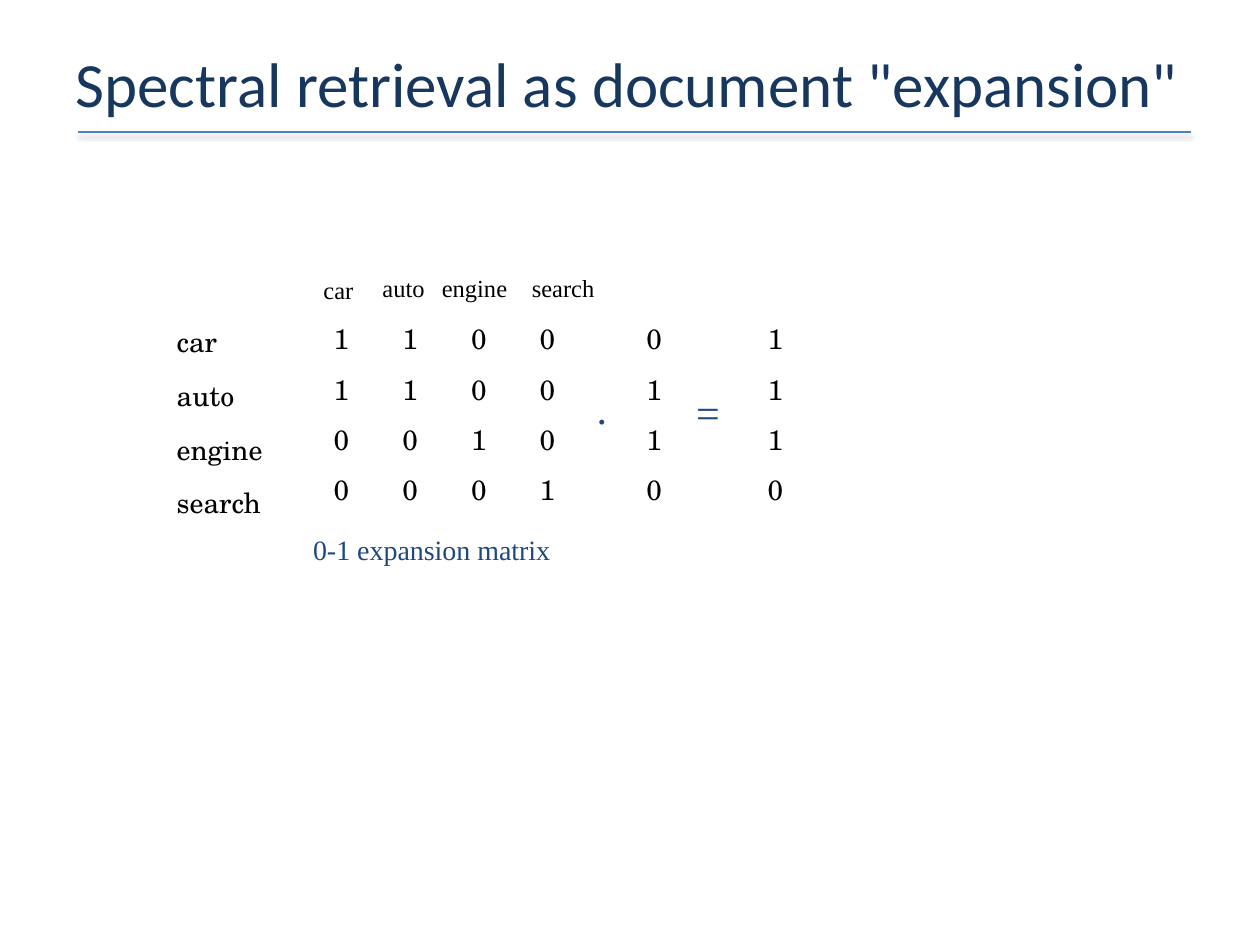
from lxml.etree import SubElement
from pptx import Presentation
from pptx.dml.color import RGBColor
from pptx.enum.shapes import MSO_CONNECTOR
from pptx.enum.text import MSO_ANCHOR, MSO_AUTO_SIZE, PP_ALIGN
from pptx.oxml.ns import qn
from pptx.util import Pt

COLORS = {"title": "17375E", "rule": "4F81BD", "note": "1F497D",
          "text": "000000", "shadow": "000000"}
TERMS = ["car", "auto", "engine", "search"]
EXPANSION = [[1, 1, 0, 0], [1, 1, 0, 0], [0, 0, 1, 0], [0, 0, 0, 1]]
DOCUMENT = [[0], [1], [1], [0]]
EXPANDED = [[1], [1], [1], [0]]
MATRIX_TOP, MATRIX_ROW, MATRIX_COLUMN = 179.2, 28.7, 39.25
TERMS_LEFT, MATRIX_LEFT = 93.8, 175.5


def style_paragraph(paragraph, font, size, color, align=PP_ALIGN.LEFT):
    paragraph.alignment = align
    for run in paragraph.runs:
        run.font.name = font
        run.font.size = Pt(size)
        run.font.color.rgb = RGBColor.from_string(COLORS[color])


def add_title(slide, text):
    title = slide.shapes.title
    title.left, title.top, title.width, title.height = Pt(36), Pt(21.6), Pt(648), Pt(51)
    title.text_frame.text = text
    title.text_frame.vertical_anchor = MSO_ANCHOR.MIDDLE
    style_paragraph(title.text_frame.paragraphs[0], "Calibri", 36, "title")


def add_title_rule(slide):
    """Add the line under the title, with its soft shadow below."""
    rule = slide.shapes.add_connector(
        MSO_CONNECTOR.STRAIGHT, Pt(44.6), Pt(75.6), Pt(680.4), Pt(75.6))
    rule.line.color.rgb = RGBColor.from_string(COLORS["rule"])
    rule.line.width = Pt(1)
    effects = SubElement(rule._element.spPr, qn("a:effectLst"))
    shadow = SubElement(effects, qn("a:outerShdw"), blurRad=str(Pt(3.1)),
                        dist=str(Pt(1.6)), dir="5400000", rotWithShape="0")
    color = SubElement(shadow, qn("a:srgbClr"), val=COLORS["shadow"])
    SubElement(color, qn("a:alpha"), val="38000")


def add_label(slide, text, left, top, width, height, size, color, align=PP_ALIGN.LEFT):
    box = slide.shapes.add_textbox(Pt(left), Pt(top), Pt(width), Pt(height))
    frame = box.text_frame
    frame.word_wrap = False
    frame.auto_size = MSO_AUTO_SIZE.SHAPE_TO_FIT_TEXT
    frame.text = text
    style_paragraph(frame.paragraphs[0], "Times New Roman", size, color, align)


def add_grid(slide, rows, left, top, column_width, row_height):
    """Add a plain table without fills and return its cells."""
    count = len(rows[0])
    table = slide.shapes.add_table(
        len(rows), count, Pt(left), Pt(top),
        Pt(column_width * count), Pt(row_height * len(rows))).table
    table.first_row = table.horz_banding = False
    for row, values in zip(table.rows, rows):
        row.height = Pt(row_height)
        for cell, value in zip(row.cells, values):
            cell.fill.background()
            cell.text_frame.text = str(value)
            paragraph = cell.text_frame.paragraphs[0]
            paragraph.space_before = Pt(3.2)
            style_paragraph(paragraph, "TeX Gyre Schola", 16, "text")
    return list(table.iter_cells())


def add_matrix(slide, rows, left):
    for cell in add_grid(slide, rows, left, MATRIX_TOP, MATRIX_COLUMN, MATRIX_ROW):
        cell.margin_left = cell.margin_right = cell.margin_top = cell.margin_bottom = 0
        cell.vertical_anchor = MSO_ANCHOR.MIDDLE
        cell.text_frame.paragraphs[0].alignment = PP_ALIGN.CENTER


def main():
    presentation = Presentation()
    presentation.slide_width, presentation.slide_height = Pt(720), Pt(540)
    slide = presentation.slides.add_slide(presentation.slide_layouts[5])

    add_title(slide, 'Spectral retrieval as document "expansion"')
    add_title_rule(slide)

    add_grid(slide, [[term] for term in TERMS], TERMS_LEFT, 180,
             MATRIX_LEFT - TERMS_LEFT, 30.6)
    add_matrix(slide, EXPANSION, MATRIX_LEFT)
    header_places = [(177.8, 153.8, 31.7), (211.5, 152.6, 38.9),
                     (245.4, 152.3, 52.6), (296.8, 152.6, 51.1)]
    for term, (left, top, width) in zip(TERMS, header_places):
        add_label(slide, term, left, top, width, 24.5, 14, "text")
    add_label(slide, "0-1 expansion matrix", 171.8, 301, 151.9, 26.6, 16, "note")

    add_label(slide, "·", 332.8, 221.8, 22.3, 36, 24, "note", PP_ALIGN.CENTER)
    add_matrix(slide, DOCUMENT, 354.2)
    add_label(slide, "=", 390.2, 217.4, 28.8, 36, 24, "note", PP_ALIGN.CENTER)
    add_matrix(slide, EXPANDED, 423.4)

    presentation.save("out.pptx")


if __name__ == "__main__":
    main()
